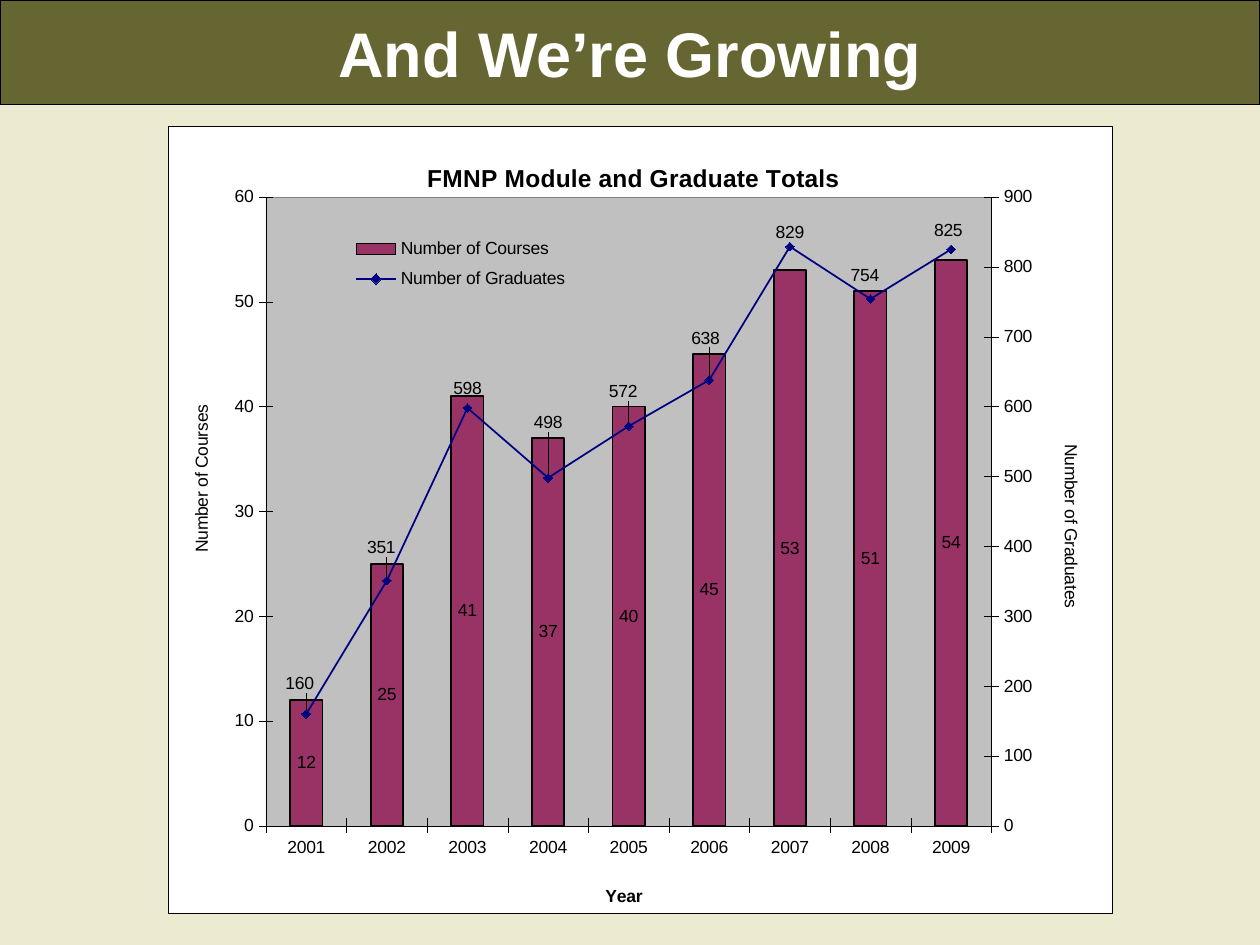
from copy import deepcopy

from pptx import Presentation
from pptx.chart.axis import ValueAxis
from pptx.chart.data import CategoryChartData
from pptx.dml.color import RGBColor
from pptx.enum.chart import (XL_CHART_TYPE, XL_LABEL_POSITION, XL_LEGEND_POSITION,
                             XL_MARKER_STYLE, XL_TICK_MARK)
from pptx.enum.text import MSO_ANCHOR, PP_ALIGN
from pptx.oxml import parse_xml
from pptx.oxml.ns import nsdecls, qn
from pptx.util import Inches, Pt

color = RGBColor.from_string


def place(element, index, **values):
    """Give a chart element a manual layout, inserted as child number index."""
    for old in element.findall(qn("c:layout")):
        element.remove(old)
    items = "".join(f'<c:{name} val="{value}"/>' for name, value in values.items())
    element.insert(index, parse_xml(
        f'<c:layout {nsdecls("c")}><c:manualLayout>{items}</c:manualLayout></c:layout>'))


def area_format(fill, line):
    return parse_xml(
        f'<c:spPr {nsdecls("c", "a")}><a:solidFill><a:srgbClr val="{fill}"/></a:solidFill>'
        f'<a:ln w="3175"><a:solidFill><a:srgbClr val="{line}"/></a:solidFill></a:ln></c:spPr>')


presentation = Presentation()
presentation.slide_width, presentation.slide_height = Inches(10), Inches(7.5)
slide = presentation.slides.add_slide(presentation.slide_layouts[5])
slide.background.fill.solid()
slide.background.fill.fore_color.rgb = color("ECEBD1")

# Title band
title = slide.shapes.title
title.left, title.top, title.width, title.height = 0, 0, Inches(10), Inches(0.83)
title.fill.solid()
title.fill.fore_color.rgb = color("666633")
title.line.color.rgb = color("000000")
title.line.width = Pt(0.75)
title.text_frame.text = "And We’re Growing"
title.text_frame.vertical_anchor = MSO_ANCHOR.MIDDLE
paragraph = title.text_frame.paragraphs[0]
paragraph.alignment = PP_ALIGN.CENTER
paragraph.font.name = "Arial"
paragraph.font.size = Pt(36)
paragraph.font.bold = True
paragraph.font.color.rgb = color("FFFFFF")

# Chart
chart_data = CategoryChartData()
chart_data.categories = [str(year) for year in range(2001, 2010)]
chart_data.add_series("Number of Courses", (12, 25, 41, 37, 40, 45, 53, 51, 54))
chart_data.add_series("Number of Graduates",
                      (160, 351, 598, 498, 572, 638, 829, 754, 825))
chart = slide.shapes.add_chart(
    XL_CHART_TYPE.COLUMN_CLUSTERED, Inches(1.33), Inches(1), Inches(7.5), Inches(6.25),
    chart_data).chart
chart.font.name = "Arial"
chart.font.size = Pt(10)
chart.font.color.rgb = color("000000")
plot_area = chart.element.find(".//" + qn("c:plotArea"))

# Left and bottom axes
year_axis, course_axis = chart.category_axis, chart.value_axis
for axis in (year_axis, course_axis):
    axis.has_major_gridlines = False
    axis.major_tick_mark = XL_TICK_MARK.CROSS
    axis.format.line.color.rgb = color("000000")
    axis.format.line.width = Pt(0.25)
course_axis.minimum_scale, course_axis.maximum_scale, course_axis.major_unit = 0, 60, 10

# Graduates become a line on axes of their own
bar_chart = plot_area.find(qn("c:barChart"))
line_ser = bar_chart.findall(qn("c:ser"))[1]
line_chart = parse_xml(
    f'<c:lineChart {nsdecls("c")}><c:grouping val="standard"/><c:varyColors val="0"/>'
    '<c:marker val="1"/><c:axId val="5001"/><c:axId val="5002"/></c:lineChart>')
line_chart.insert(2, line_ser)
for flag in line_ser.findall(qn("c:invertIfNegative")):
    line_ser.remove(flag)
bar_chart.addnext(line_chart)

hidden_axis = deepcopy(plot_area.find(qn("c:catAx")))
right_axis = deepcopy(plot_area.find(qn("c:valAx")))
for axis, own_id, crossing_id in ((hidden_axis, "5001", "5002"), (right_axis, "5002", "5001")):
    axis.find(qn("c:axId")).set("val", own_id)
    axis.find(qn("c:crossAx")).set("val", crossing_id)
hidden_axis.find(qn("c:delete")).set("val", "1")
right_axis.find(qn("c:axPos")).set("val", "r")
right_axis.find(qn("c:crosses")).set("val", "max")
plot_area.findall(qn("c:valAx"))[-1].addnext(hidden_axis)
hidden_axis.addnext(right_axis)
graduate_axis = ValueAxis(right_axis)
graduate_axis.maximum_scale, graduate_axis.major_unit = 900, 100

# Titles: owner, frame, text, size, bold, rotation, x, y
chart.has_title = True
titles = (
    (chart.chart_title, "FMNP Module and Graduate Totals", 14, True, 0, 0.27, 0.04),
    (year_axis.axis_title, "Year", 10, True, 0, 0.46, 0.96),
    (course_axis.axis_title, "Number of Courses", 10, False, -90, 0.02, 0.35),
    (graduate_axis.axis_title, "Number of Graduates", 10, False, 90, 0.94, 0.4),
)
for heading, text, size, bold, rotation, x, y in titles:
    frame = heading.text_frame
    frame.text = text
    font = frame.paragraphs[0].font
    font.name, font.size, font.bold = "Arial", Pt(size), bold
    font.color.rgb = color("000000")
    body = heading.element.find(".//" + qn("a:bodyPr"))
    body.set("rot", str(rotation * 60000))
    body.set("vert", "horz")
    place(heading.element, 1, xMode="edge", yMode="edge", x=x, y=y)

# Series
bar_plot, line_plot = chart.plots
bar_plot.gap_width = 150
bar_plot.vary_by_categories = False
courses, graduates = bar_plot.series[0], line_plot.series[0]
courses.format.fill.solid()
courses.format.fill.fore_color.rgb = color("993366")
graduates.smooth = False
graduates.marker.style = XL_MARKER_STYLE.DIAMOND
graduates.marker.size = 5
graduates.marker.format.fill.solid()
graduates.marker.format.fill.fore_color.rgb = color("000080")
graduates.marker.format.line.color.rgb = color("000080")
for series, line_color, position in ((courses, "000000", XL_LABEL_POSITION.CENTER),
                                     (graduates, "000080", XL_LABEL_POSITION.ABOVE)):
    series.format.line.color.rgb = color(line_color)
    series.format.line.width = Pt(1)
    series.data_labels.show_value = True
    series.data_labels.position = position

# Shifts of the graduate labels, in percent of the chart size
label_shifts = {0: (-0.7, -1.4), 1: (-0.6, -1.8), 3: (0, -4.6), 4: (-0.6, -1.9),
                5: (-0.4, -2.9), 6: (0, 0.6), 7: (-0.6, -0.6), 8: (-0.3, 0.1)}
for index in label_shifts:
    graduates.points[index].data_label.position = XL_LABEL_POSITION.ABOVE
for label, (x, y) in zip(line_ser.iter(qn("c:dLbl")), label_shifts.values()):
    place(label, 1, x=x / 100, y=y / 100)

# Legend, plot area and frame
chart.has_legend = True
chart.legend.position = XL_LEGEND_POSITION.RIGHT
chart.legend.include_in_layout = False
chart.legend.font.name = "Arial"
chart.legend.font.size = Pt(10)
place(chart.element.find(".//" + qn("c:legend")), 1,
      xMode="edge", yMode="edge", x=0.19, y=0.13, w=0.24, h=0.09)
place(plot_area, 0, layoutTarget="inner", xMode="edge", yMode="edge",
      x=0.104, y=0.09, w=0.768, h=0.799)
plot_area.append(area_format("C0C0C0", "808080"))
chart.element.find(qn("c:chart")).addnext(area_format("FFFFFF", "000000"))

presentation.save("out.pptx")
